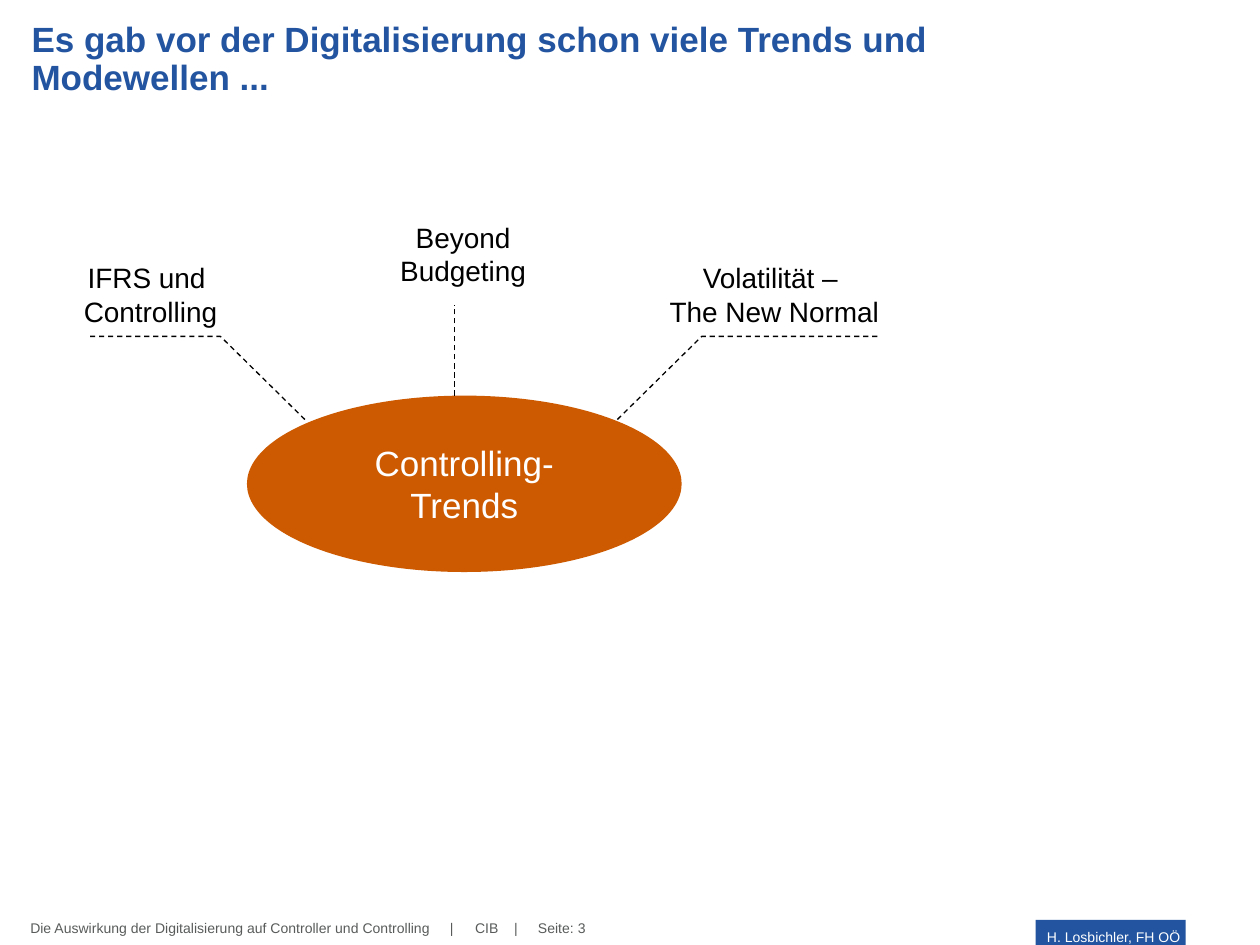
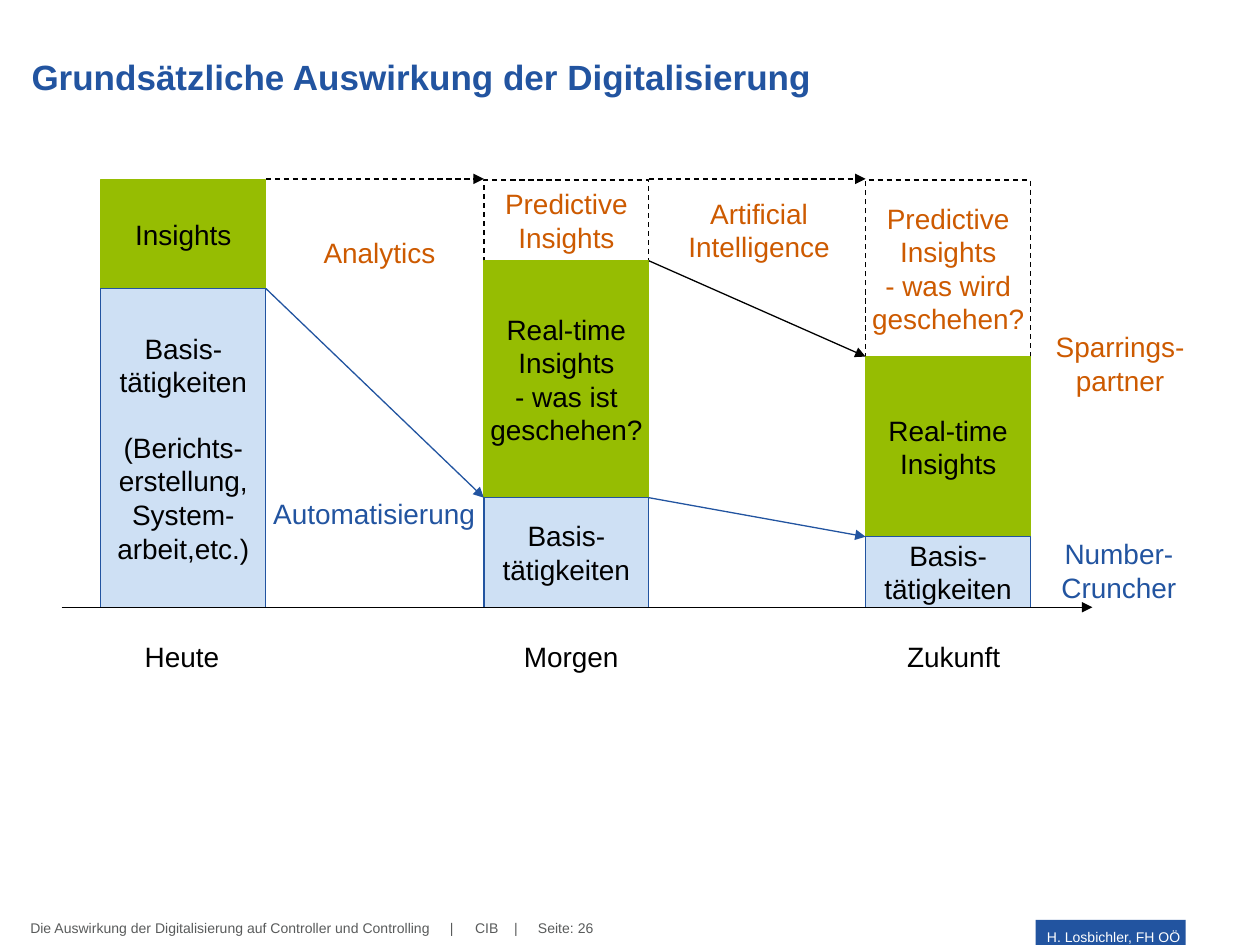
from lxml.etree import SubElement
from pptx import Presentation
from pptx.dml.color import RGBColor
from pptx.enum.dml import MSO_LINE
from pptx.enum.shapes import MSO_CONNECTOR, MSO_SHAPE
from pptx.enum.text import MSO_ANCHOR as Anchor, MSO_AUTO_SIZE, PP_ALIGN as Align
from pptx.oxml.ns import qn
from pptx.util import Inches, Pt

BLUE = RGBColor(0x22, 0x54, 0xA0)
PALE_BLUE = RGBColor(0xCE, 0xE0, 0xF4)
GREEN = RGBColor(0x96, 0xBD, 0x02)
ORANGE = RGBColor(0xCD, 0x5A, 0x00)
GREY = RGBColor(0x59, 0x5B, 0x5B)
BLACK = RGBColor(0, 0, 0)
WHITE = RGBColor(0xFF, 0xFF, 0xFF)

FONT = "Arial"
BLOCK_INSETS = (0.04, 0.05)
FOOTER_TOP = 7.3
FOOTER_SIZE = 8

BAR_TOP, BASELINE, BAR_WIDTH = 1.43, 4.82, 1.31
TODAY, TOMORROW, FUTURE = 0.8, 3.84, 6.87
BLOCK_STYLES = {
    "predictive": (WHITE, BLACK, ORANGE, True),
    "insights": (GREEN, GREEN, BLACK, False),
    "basis": (PALE_BLUE, BLUE, BLACK, False),
}
STAGES = [
    (TODAY, "Heute", 1.05, 0.8, [
        (BAR_TOP, "insights", "Insights"),
        (2.29, "basis", "Basis-tätigkeiten\n(Berichts-erstellung, System-arbeit,etc.)"),
    ]),
    (TOMORROW, "Morgen", 4.06, 0.96, [
        (BAR_TOP, "predictive", "Predictive Insights"),
        (2.07, "insights", "Real-time Insights\n- was ist geschehen?"),
        (3.95, "basis", "Basis-tätigkeiten"),
    ]),
    (FUTURE, "Zukunft", 7.1, 0.95, [
        (BAR_TOP, "predictive", "Predictive Insights\n- was wird geschehen?"),
        (2.83, "insights", "Real-time Insights"),
        (4.26, "basis", "Basis-tätigkeiten"),
    ]),
]


class Deck:
    """Holds the shared style and draws elements on the current slide."""

    def __init__(self):
        self.presentation = Presentation()
        self.presentation.slide_width = Inches(10)
        self.presentation.slide_height = Inches(7.5)
        self.shapes = None

    def add_slide(self, title, page):
        layout = self.presentation.slide_layouts[5]
        self.shapes = self.presentation.slides.add_slide(layout).shapes
        heading = self.shapes.title
        heading.left, heading.top = Inches(0.15), Inches(0.08)
        heading.width, heading.height = Inches(7.94), Inches(0.75)
        self.set_text(heading, title, 20, BLUE, Align.LEFT, Anchor.BOTTOM, bold=True)
        heading.text_frame.auto_size = MSO_AUTO_SIZE.NONE
        heading.text_frame.paragraphs[0].line_spacing = 0.9
        self.footer(page)

    def footer(self, page):
        entries = [
            (3.77, 1.82, "CIB\t|", 0.31),
            (0.24, 7.08, "Die Auswirkung der Digitalisierung auf Controller und Controlling\t|", 3.33),
            (4.27, 0.63, f"Seite: {page}", None),
        ]
        for left, width, text, tab in entries:
            entry = self.shapes.add_textbox(
                Inches(left), Inches(FOOTER_TOP), Inches(width), Inches(0.13))
            self.set_text(entry, text, FOOTER_SIZE, GREY, Align.LEFT, insets=(0, 0), tab=tab)
        self.shape(MSO_SHAPE.RECTANGLE, (8.22, FOOTER_TOP, 1.19, 0.22), "H. Losbichler, FH OÖ",
                   BLUE, WHITE, FOOTER_SIZE, align=Align.RIGHT, anchor=Anchor.BOTTOM,
                   insets=(0.04, 0.02))

    def set_text(self, holder, text, size, color, align, anchor=Anchor.TOP,
                 insets=(0.1, 0.05), bold=False, tab=None, wrap=True):
        frame = holder.text_frame
        frame.text = text
        frame.word_wrap = wrap
        frame.vertical_anchor = anchor
        frame.margin_left = frame.margin_right = Inches(insets[0])
        frame.margin_top = frame.margin_bottom = Inches(insets[1])
        for paragraph in frame.paragraphs:
            paragraph.alignment = align
            if tab:
                stops = SubElement(paragraph._p.get_or_add_pPr(), qn("a:tabLst"))
                SubElement(stops, qn("a:tab"), pos=str(Inches(tab)), algn="l")
            for run in paragraph.runs:
                run.font.name = FONT
                run.font.size = Pt(size)
                run.font.bold = bold
                run.font.color.rgb = color

    def label(self, left, top, width, text, color=BLACK, align=Align.CENTER):
        height = 0.64 if "\v" in text else 0.37
        box = self.shapes.add_textbox(Inches(left), Inches(top), Inches(width), Inches(height))
        self.set_text(box, text, 16, color, align, wrap=False)

    def shape(self, preset, bounds, text, fill, color, size, outline=None, dashed=False,
              align=Align.CENTER, anchor=Anchor.MIDDLE, insets=(0.1, 0.05)):
        shape = self.shapes.add_shape(preset, *map(Inches, bounds))
        shape.shadow.inherit = False
        shape.fill.solid()
        shape.fill.fore_color.rgb = fill
        if outline is None:
            shape.line.fill.background()
        else:
            self.stroke(shape.line, outline, dashed)
        self.set_text(shape, text, size, color, align, anchor, insets)
        return shape

    def stroke(self, line, color, dashed):
        line.color.rgb = color
        line.width = Pt(0.75)
        if dashed:
            line.dash_style = MSO_LINE.DASH

    def line(self, start, end, color=BLACK, dashed=False, arrow=True):
        connector = self.shapes.add_connector(
            MSO_CONNECTOR.STRAIGHT, *map(Inches, (*start, *end)))
        self.stroke(connector.line, color, dashed)
        properties = connector._element.spPr
        if arrow:
            SubElement(properties.find(qn("a:ln")), qn("a:tailEnd"), type="triangle")
        SubElement(properties, qn("a:effectLst"))

    def callout(self, *points):
        start, *rest = [tuple(map(Inches, point)) for point in points]
        builder = self.shapes.build_freeform(*start)
        builder.add_line_segments(rest, close=False)
        leader = builder.convert_to_shape()
        leader.shadow.inherit = False
        leader.fill.background()
        self.stroke(leader.line, BLACK, True)


def add_trends(deck):
    deck.add_slide("Es gab vor der Digitalisierung schon viele Trends und Modewellen ...", 3)
    deck.shape(MSO_SHAPE.OVAL, (1.96, 3.14, 3.45, 1.4), "Controlling-Trends", ORANGE, WHITE, 20)
    deck.label(0.56, 2.02, 1.27, "IFRS und \vControlling")
    deck.callout((2.42, 3.33), (1.75, 2.67), (0.69, 2.67))
    deck.label(5.2, 2.02, 1.89, "Volatilität – \vThe New Normal")
    deck.callout((4.9, 3.33), (5.57, 2.67), (6.97, 2.67))
    deck.label(3.07, 1.7, 1.21, "Beyond\vBudgeting")
    deck.line((3.61, 3.14), (3.61, 2.42), dashed=True, arrow=False)


def add_impact(deck):
    deck.add_slide("Grundsätzliche Auswirkung der Digitalisierung", 26)
    for left, stage, label_left, label_width, blocks in STAGES:
        bottoms = [top for top, _, _ in blocks[1:]] + [BASELINE]
        for (top, kind, text), bottom in zip(blocks, bottoms):
            fill, outline, color, dashed = BLOCK_STYLES[kind]
            block = deck.shape(MSO_SHAPE.RECTANGLE, (left, top, BAR_WIDTH, bottom - top), text,
                               fill, color, 16, outline, dashed, insets=BLOCK_INSETS)
            if kind == "basis":
                for paragraph in block.text_frame.paragraphs[1:]:
                    paragraph.space_before = Pt(18.4)
        deck.label(label_left, 5.03, label_width, stage, align=Align.LEFT)

    for left, target in ((TODAY, TOMORROW), (TOMORROW, FUTURE)):
        deck.line((left + BAR_WIDTH, 1.42), (target, 1.42), dashed=True)
    deck.line((TODAY + BAR_WIDTH, 2.29), (TOMORROW, 3.95), BLUE)
    deck.line((TOMORROW + BAR_WIDTH, 3.95), (FUTURE, 4.26), BLUE)
    deck.line((TOMORROW + BAR_WIDTH, 2.07), (FUTURE, 2.83))
    deck.line((0.49, BASELINE), (8.67, BASELINE))

    deck.label(2.47, 1.82, 1.1, "Analytics", ORANGE, Align.LEFT)
    deck.label(2.07, 3.89, 1.82, "Automatisierung", BLUE, Align.LEFT)
    deck.label(5.36, 1.51, 1.33, "Artificial\vIntelligence", ORANGE)
    deck.label(8.27, 2.57, 1.24, "Sparrings-\vpartner", ORANGE)
    deck.label(8.32, 4.21, 1.12, "Number-\vCruncher", BLUE)


def main():
    deck = Deck()
    add_trends(deck)
    add_impact(deck)
    deck.presentation.save("out.pptx")


if __name__ == "__main__":
    main()
